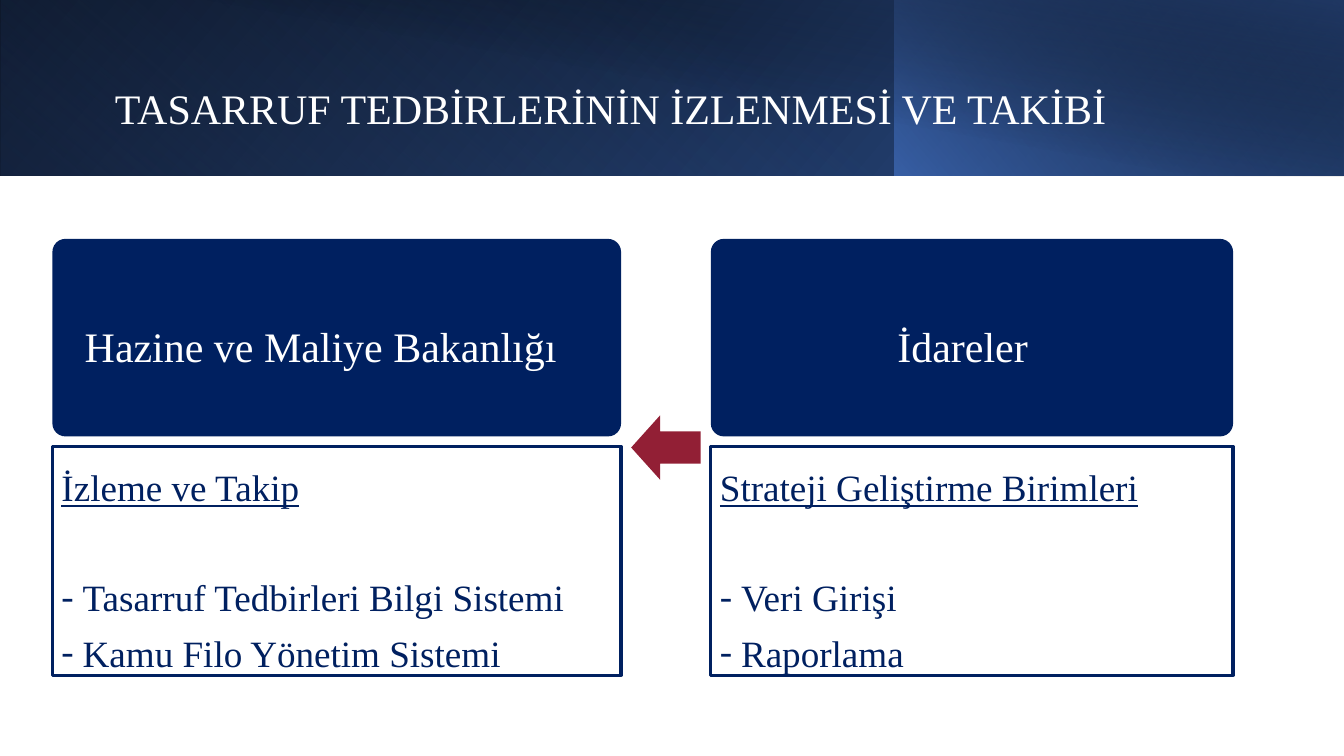
from dataclasses import dataclass

from lxml import etree
from pptx import Presentation
from pptx import util as u
from pptx.dml.color import RGBColor
from pptx.enum import shapes, text
from pptx.oxml import ns

Inches, Pt = u.Inches, u.Pt


@dataclass(frozen=True)
class Theme:
    font: str = "Times New Roman"
    navy: str = "002060"
    white: str = "FFFFFF"
    red: str = "921F35"
    black: str = "000000"
    blue: str = "4472C4"
    mid_blue: str = "2F5597"
    deep_blue: str = "203864"
    heading_size: float = 30
    body_size: float = 26.5


THEME = Theme()

# left, top, width, height, rotation, flipped, angle, stops of (position, colour, opacity)
BANNER = [
    (0, 0, 13.33, 1.74, 0, True, 140,
     [(0, THEME.black, 100), (100, THEME.mid_blue, 100)]),
    (0, 0, 8.88, 1.74, 180, True, 230,
     [(20, THEME.blue, 0), (100, THEME.deep_blue, 55)]),
    (8.87, 0, 4.46, 1.74, 0, True, 220,
     [(0, THEME.blue, 66), (100, THEME.black, 30)]),
    (0.5, 0, 12.83, 1.75, 0, False, 280,
     [(50, THEME.black, 0), (99, THEME.deep_blue, 52)]),
]

# left, width, heading left, placeholder indexes, heading, subheading, items
COLUMNS = [
    (7.05, 5.18, 8.9, (3, 4), "İdareler", "Strateji Geliştirme Birimleri",
     ["Veri Girişi", "Raporlama"]),
    (0.52, 5.64, 0.84, (1, 2), "Hazine ve Maliye Bakanlığı", "İzleme ve Takip",
     ["Tasarruf Tedbirleri Bilgi Sistemi", "Kamu Filo Yönetim Sistemi"]),
]


def add_block(s, kind, left, top, width, height, fill=None):
    sp = s.shapes.add_shape(kind, Inches(left), Inches(top), Inches(width), Inches(height))
    sp.shadow.inherit = False
    sp.line.fill.background()
    if fill:
        sp.fill.solid()
        sp.fill.fore_color.rgb = RGBColor.from_string(fill)
    return sp


def add_child(parent, tag, **attributes):
    return etree.SubElement(parent, ns.qn(tag), attributes)


def add_gradient(s, left, top, width, height, rotation, flipped, angle, stops):
    sp = add_block(s, shapes.MSO_SHAPE.RECTANGLE, left, top, width, height)
    sp.rotation = rotation
    props = sp.element.spPr
    if flipped:
        props.find(ns.qn("a:xfrm")).set("flipH", "1")
    grad = etree.Element(ns.qn("a:gradFill"), rotWithShape="1")
    stop_list = add_child(grad, "a:gsLst")
    for position, color, opacity in stops:
        stop = add_child(stop_list, "a:gs", pos=str(position * 1000))
        clr = add_child(stop, "a:srgbClr", val=color)
        add_child(clr, "a:alpha", val=str(opacity * 1000))
    add_child(grad, "a:lin", ang=str(angle * 60000), scaled="0")
    props.find(ns.qn("a:prstGeom")).addnext(grad)


def place_text(ph, left, top, width, height):
    """Move a placeholder above the shapes drawn so far and clear its margins."""
    ph.left, ph.top, ph.width, ph.height = map(Inches, (left, top, width, height))
    ph.element.getparent().append(ph.element)
    tf = ph.text_frame
    tf.word_wrap = True
    tf.auto_size = text.MSO_AUTO_SIZE.NONE
    tf.vertical_anchor = text.MSO_ANCHOR.TOP
    tf.margin_left = tf.margin_top = tf.margin_right = tf.margin_bottom = 0
    return tf


def write(p, words, size, color, spacing=1.07, after=0, underline=False, dash=False):
    p.alignment = text.PP_ALIGN.LEFT
    p.line_spacing = spacing
    p.space_before, p.space_after = Pt(0), Pt(after)
    r = p.add_run()
    r.text = words
    r.font.name, r.font.size = THEME.font, Pt(size)
    r.font.bold, r.font.underline = False, underline
    r.font.color.rgb = RGBColor.from_string(color)
    props = p._p.get_or_add_pPr()
    indent = Inches(0.21) if dash else 0
    props.set("marL", str(indent))
    props.set("indent", str(-indent))
    if dash:
        add_child(props, "a:buFont", typeface=THEME.font)
        add_child(props, "a:buChar", char="-")
    else:
        add_child(props, "a:buNone")


def add_column(s, left, width, heading_left, indexes, heading, subheading, items):
    card = add_block(s, shapes.MSO_SHAPE.ROUNDED_RECTANGLE, left, 2.37, width, 1.96, THEME.navy)
    card.adjustments[0] = 0.066
    frame = add_block(s, shapes.MSO_SHAPE.RECTANGLE, left, 4.43, width, 2.27)
    frame.fill.background()
    frame.line.color.rgb = RGBColor.from_string(THEME.navy)
    frame.line.width = Pt(2.25)

    placeholders = {ph.placeholder_format.idx: ph for ph in s.placeholders}
    head, body = (placeholders[i] for i in indexes)
    tf = place_text(head, heading_left, 3.14, left + width - heading_left, 0.68)
    write(tf.paragraphs[0], heading, THEME.heading_size, THEME.white)

    tf = place_text(body, left + 0.09, 4.58, width - 0.12, 2.1)
    write(tf.paragraphs[0], subheading, THEME.body_size, THEME.navy, after=44.4, underline=True)
    for item in items:
        write(tf.add_paragraph(), item, THEME.body_size, THEME.navy, after=5.6, dash=True)


def main():
    prs = Presentation()
    prs.slide_width, prs.slide_height = Inches(13.33), Inches(7.5)
    s = prs.slides.add_slide(prs.slide_layouts.get_by_name("Comparison"))
    for band in BANNER:
        add_gradient(s, *band)
    tf = place_text(s.shapes.title, 1.14, 0.77, 10.7, 0.58)
    write(tf.paragraphs[0], "TASARRUF TEDBİRLERİNİN İZLENMESİ VE TAKİBİ",
          THEME.heading_size, THEME.white, spacing=1.1)
    for column in COLUMNS:
        add_column(s, *column)
    arrow = add_block(s, shapes.MSO_SHAPE.LEFT_ARROW, 6.26, 4.12, 0.69, 0.64, THEME.red)
    arrow.adjustments[0], arrow.adjustments[1] = 0.5, 0.45
    prs.save("out.pptx")


if __name__ == "__main__":
    main()
